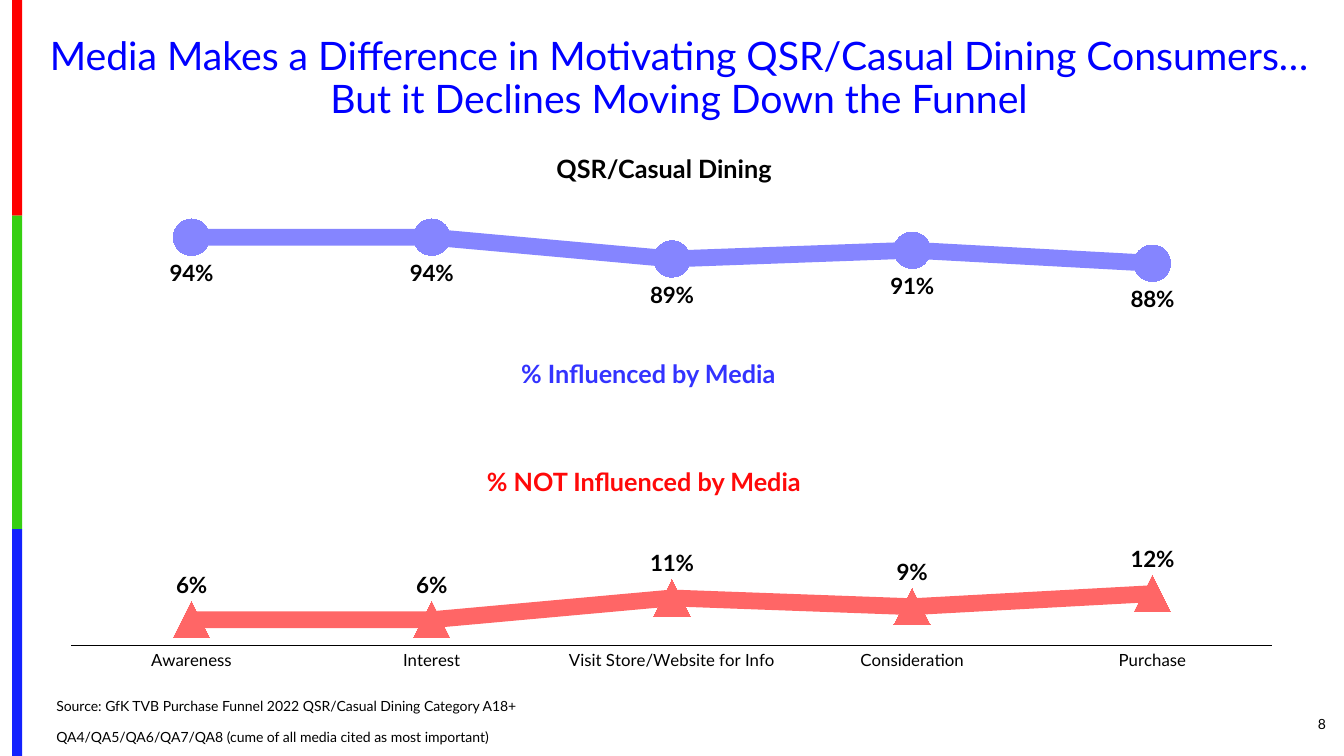
from lxml import etree
from pptx import Presentation
from pptx import util as u
from pptx.chart.data import CategoryChartData
from pptx.dml.color import RGBColor
from pptx.enum import chart as ch, shapes, text
from pptx.oxml.ns import qn

FONT = "Lato"
BLACK, TITLE_BLUE = "000000", "0000FF"
INFLUENCED, NOT_INFLUENCED = "3333FF", "FF0909"


def rgb(hex_color):
    return RGBColor.from_string(hex_color)


def style_font(font, size, color, bold=False):
    font.name = FONT
    font.size = u.Pt(size)
    font.bold = bold
    font.color.rgb = rgb(color)


def add_text(slide, box, content, size, color, bold=False, align="LEFT",
             anchor="TOP", line_spacing=None, gap=0):
    frame = slide.shapes.add_textbox(*map(u.Inches, box)).text_frame
    frame.word_wrap = True
    frame.vertical_anchor = getattr(text.MSO_ANCHOR, anchor)
    frame.text = content
    for index, paragraph in enumerate(frame.paragraphs):
        paragraph.alignment = getattr(text.PP_ALIGN, align)
        paragraph.line_spacing = line_spacing
        if index:
            paragraph.space_before = u.Pt(gap)
        for run in paragraph.runs:
            style_font(run.font, size, color, bold)


def add_side_stripe(slide, bands):
    top = 0
    for color, height in bands:
        band = slide.shapes.add_shape(
            shapes.MSO_SHAPE.RECTANGLE,
            *map(u.Inches, (0.12, top, 0.1, height)))
        band.shadow.inherit = False
        band.fill.solid()
        band.fill.fore_color.rgb = rgb(color)
        band.line.fill.background()
        top += height


def style_series(series, line_color, marker_color, marker, label_position):
    series.smooth = False
    series.format.line.color.rgb = rgb(line_color)
    series.format.line.width = u.Pt(12)
    series.marker.style = marker
    series.marker.size = 26
    series.marker.format.fill.solid()
    series.marker.format.fill.fore_color.rgb = rgb(marker_color)
    series.marker.format.line.fill.background()
    labels = series.data_labels
    labels.show_value = True
    labels.position = label_position
    labels.number_format = "0%"
    labels.number_format_is_linked = False
    style_font(labels.font, 16, BLACK, bold=True)


def set_plot_layout(chart, x, y, w, h):
    plot_area = chart.plots[0]._element.getparent()
    for old in plot_area.findall(qn("c:layout")):
        plot_area.remove(old)
    layout = etree.Element(qn("c:layout"))
    manual = etree.SubElement(layout, qn("c:manualLayout"))
    settings = {"layoutTarget": "inner", "xMode": "edge", "yMode": "edge",
                "x": x, "y": y, "w": w, "h": h}
    for name, value in settings.items():
        etree.SubElement(manual, qn(f"c:{name}")).set("val", str(value))
    plot_area.insert(0, layout)


def add_funnel_chart(slide):
    funnel = CategoryChartData(number_format="0%")
    funnel.categories = ["Awareness", "Interest", "Visit Store/Website for Info",
                         "Consideration", "Purchase"]
    funnel.add_series("Series 1", (0.94, 0.94, 0.89, 0.91, 0.88))
    funnel.add_series("Series 2", (0.06, 0.06, 0.11, 0.09, 0.12))
    chart = slide.shapes.add_chart(
        ch.XL_CHART_TYPE.LINE_MARKERS,
        *map(u.Inches, (0.46, 2, 12.41, 4.74)), funnel).chart
    chart.has_legend = False
    chart.has_title = False
    style_font(chart.font, 10, BLACK)
    chart.plots[0].vary_by_categories = False

    # Axes
    stages = chart.category_axis
    stages.major_tick_mark = stages.minor_tick_mark = ch.XL_TICK_MARK.NONE
    stages.format.line.color.rgb = rgb(BLACK)
    stages.format.line.width = u.Pt(0.75)
    style_font(stages.tick_labels.font, 12, BLACK)
    share = chart.value_axis
    share.minimum_scale, share.maximum_scale = 0, 1
    share.has_major_gridlines = False
    share.visible = False

    # Lines
    influenced, not_influenced = chart.plots[0].series
    style_series(influenced, "8585FF", INFLUENCED,
                 ch.XL_MARKER_STYLE.CIRCLE, ch.XL_LABEL_POSITION.BELOW)
    style_series(not_influenced, "FF6666", NOT_INFLUENCED,
                 ch.XL_MARKER_STYLE.TRIANGLE, ch.XL_LABEL_POSITION.ABOVE)
    set_plot_layout(chart, 0.02, 0.02, 0.96, 0.91)


def main():
    deck = Presentation()
    deck.slide_width, deck.slide_height = u.Inches(13.33), u.Inches(7.5)
    slide = deck.slides.add_slide(deck.slide_layouts[6])

    add_side_stripe(slide, [("FE0000", 2.14), ("36CF12", 3.11), ("1322FE", 2.25)])

    # Title
    add_text(slide, (0.22, 0.31, 13.03, 0.95),
             "Media Makes a Difference in Motivating QSR/Casual Dining Consumers…\v"
             "But it Declines Moving Down the Funnel",
             28, TITLE_BLUE, align="CENTER", anchor="MIDDLE", line_spacing=0.9)

    # Chart with its headings
    add_funnel_chart(slide)
    add_text(slide, (5.07, 3.51, 3.17, 0.4), "% Influenced by Media",
             18, INFLUENCED, bold=True)
    add_text(slide, (4.73, 4.58, 3.78, 0.4), "% NOT Influenced by Media",
             18, NOT_INFLUENCED, bold=True)
    add_text(slide, (5.42, 1.47, 2.62, 0.4), "QSR/Casual Dining",
             18, BLACK, bold=True)

    # Source and page number
    add_text(slide, (0.46, 6.87, 9.45, 0.58),
             "Source: GfK TVB Purchase Funnel 2022 QSR/Casual Dining Category A18+\n"
             "QA4/QA5/QA6/QA7/QA8 (cume of all media cited as most important)",
             10, BLACK, gap=10)
    add_text(slide, (12.17, 6.98, 1.08, 0.4), "8", 10, BLACK,
             align="RIGHT", anchor="MIDDLE")

    deck.save("out.pptx")


if __name__ == "__main__":
    main()
